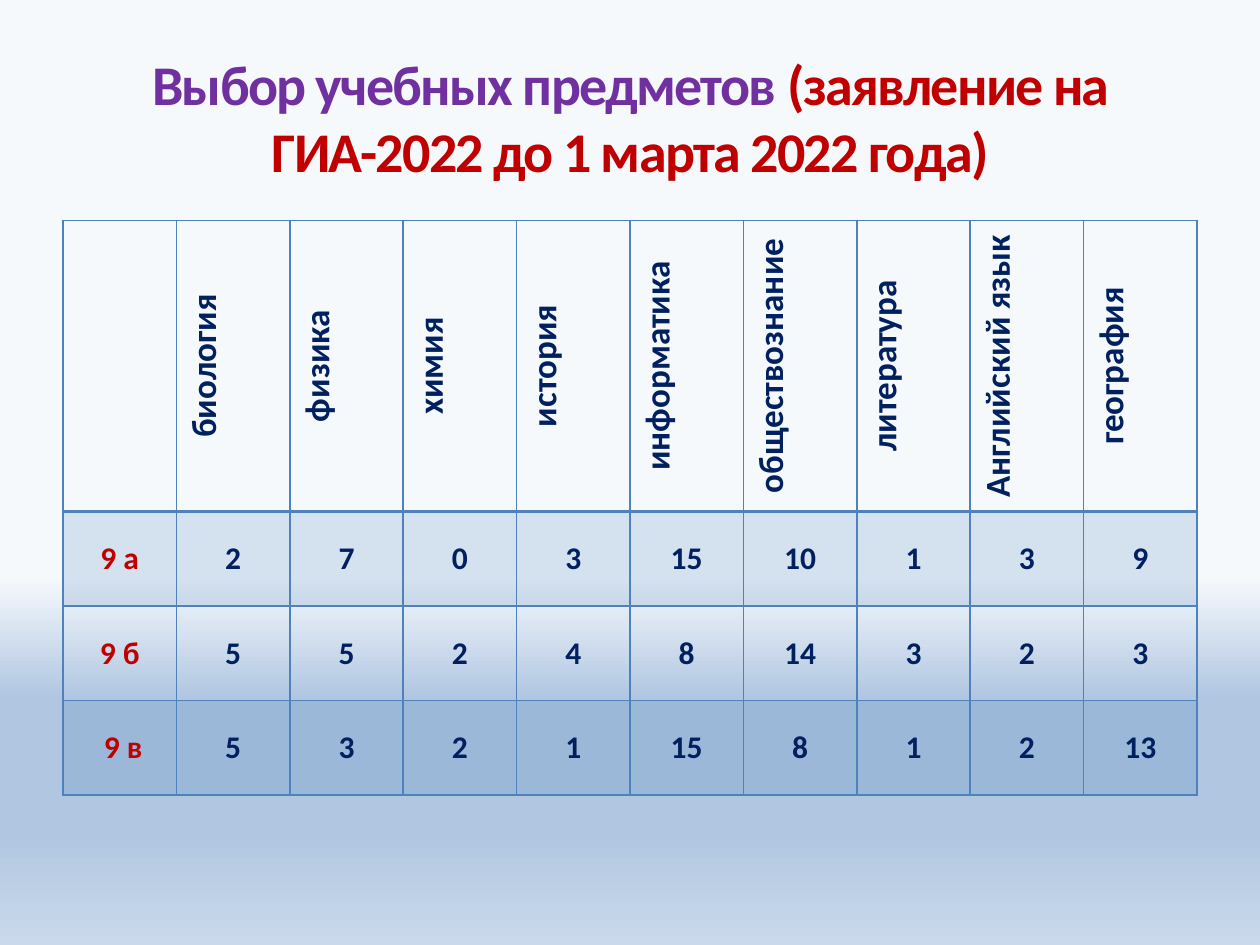
from lxml import etree
from pptx import Presentation
from pptx.dml.color import RGBColor
from pptx.enum.text import MSO_ANCHOR, PP_ALIGN
from pptx.oxml.ns import qn
from pptx.util import Emu, Pt

CENTER = PP_ALIGN.CENTER
MIDDLE = MSO_ANCHOR.MIDDLE
TITLE_ONLY = 5
PX = 9144  # 100 px to the inch
FONT = "Calibri"
COLORS = {
    "purple": "7030A0", "red": "C00000", "navy": "002060", "blue": "4F81BD",
    "pale": "F6F9FC", "mid": "B0C6E1", "light": "CAD9EB",
}
BACKGROUND_STOPS = [(61, "pale"), (74, "mid"), (88, "mid"), (100, "light")]
SUBJECTS = ["", "биология", "физика", "химия", "история", "информатика",
            "обществознание", "литература", "Английский язык", "география"]
CLASSES = [
    ("9 а", 2, 7, 0, 3, 15, 10, 1, 3, 9),
    ("9 б", 5, 5, 2, 4, 8, 14, 3, 2, 3),
    (" 9 в", 5, 3, 2, 1, 15, 8, 1, 2, 13),
]
HEADER_HEIGHT, ROW_HEIGHT = 231, 75


def px(length):
    return Emu(length * PX)


def add_color(parent, color, alpha=None):
    node = etree.SubElement(parent, qn("a:srgbClr"), val=COLORS[color])
    if alpha is not None:
        etree.SubElement(node, qn("a:alpha"), val=str(alpha * 1000))


def add_text(para, text, size, color, spacing=None):
    para.alignment = CENTER
    span = para.add_run()
    span.text = text
    span.font.name = FONT
    span.font.size = Pt(size)
    span.font.bold = True
    span.font.color.rgb = RGBColor.from_string(COLORS[color])
    if spacing is not None:
        span.font._element.set("spc", str(spacing * 100))


def paint_background(page):
    fill = page.background.fill
    fill.gradient()
    fill.gradient_angle = 270
    stops = page.element.find(".//" + qn("a:gsLst"))
    for stop in list(stops):
        stops.remove(stop)
    for position, color in BACKGROUND_STOPS:
        stop = etree.SubElement(stops, qn("a:gs"), pos=str(position * 1000))
        add_color(stop, color)


def place_title(page, left, top, width, height):
    title = page.shapes.title
    title.left, title.top = px(left), px(top)
    title.width, title.height = px(width), px(height)
    frame = title.text_frame
    frame.word_wrap = True
    frame.vertical_anchor = MIDDLE
    para = frame.paragraphs[0]
    add_text(para, "Выбор учебных предметов ", size=32, color="purple", spacing=-1)
    add_text(para, "(заявление на ГИА-2022 до 1 марта 2022 года)",
             size=32, color="red", spacing=-1)


def style_cell(cell, bottom_width, shaded):
    cell.vertical_anchor = MIDDLE
    properties = cell._tc.get_or_add_tcPr()
    # Borders come before the fill
    for side, width in (("L", 1), ("R", 1), ("T", 1), ("B", bottom_width)):
        line = etree.SubElement(properties, qn(f"a:ln{side}"), w=str(Pt(width)))
        add_color(etree.SubElement(line, qn("a:solidFill")), "blue")
    if shaded:
        add_color(etree.SubElement(properties, qn("a:solidFill")), "blue", alpha=20)
    else:
        cell.fill.background()


def place_table(page, left, top, width):
    height = HEADER_HEIGHT + ROW_HEIGHT * len(CLASSES)
    table = page.shapes.add_table(len(CLASSES) + 1, len(SUBJECTS), px(left), px(top),
                                  px(width), px(height)).table
    table.first_row = table.horz_banding = False
    for column in table.columns:
        column.width = px(width // len(SUBJECTS))
    for index, row in enumerate(table.rows):
        row.height = px(ROW_HEIGHT if index else HEADER_HEIGHT)

    # Subjects, written upwards
    for index, subject in enumerate(SUBJECTS):
        cell = table.cell(0, index)
        style_cell(cell, bottom_width=2, shaded=False)
        if subject:
            cell._tc.get_or_add_tcPr().set("vert", "vert270")
            add_text(cell.text_frame.paragraphs[0], subject, size=20, color="navy")

    # Choices by class, every other row shaded
    for row, values in enumerate(CLASSES, start=1):
        for column, value in enumerate(values):
            cell = table.cell(row, column)
            style_cell(cell, bottom_width=1, shaded=row % 2 == 1)
            add_text(cell.text_frame.paragraphs[0], str(value), size=18,
                     color="navy" if column else "red")


def main():
    deck = Presentation()
    deck.slide_width, deck.slide_height = px(1000), px(750)
    page = deck.slides.add_slide(deck.slide_layouts[TITLE_ONLY])
    paint_background(page)
    place_title(page, 50, 30, 900, 125)
    place_table(page, 50, 175, 900)
    deck.save("out.pptx")


if __name__ == "__main__":
    main()
